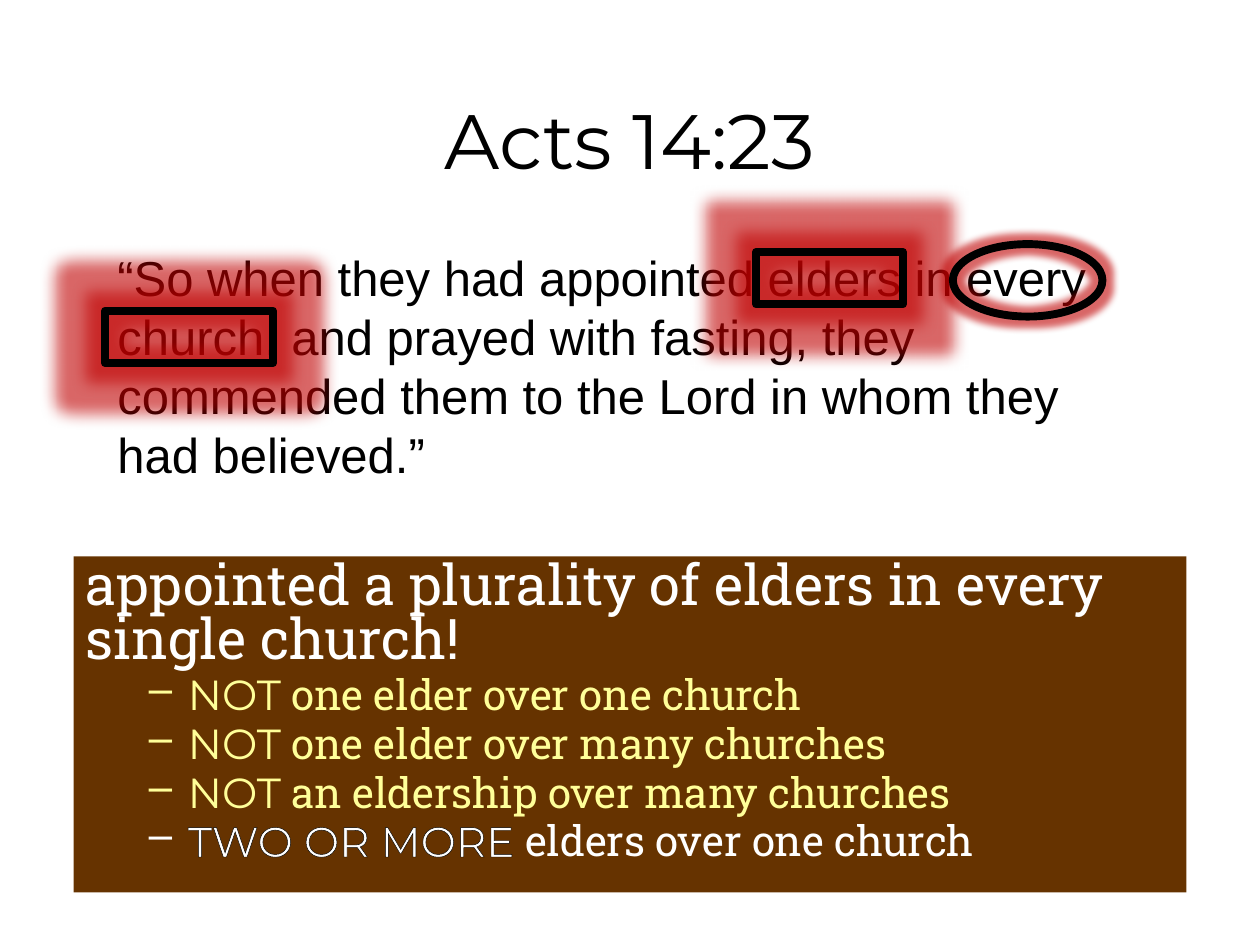
import pptx
import pptx.util
import pptx.dml.color
import pptx.enum.shapes
import pptx.enum.text
import pptx.oxml
import pptx.oxml.ns
from lxml import etree

RGBColor = pptx.dml.color.RGBColor
BLACK = RGBColor(0x00, 0x00, 0x00)
WHITE = RGBColor(0xFF, 0xFF, 0xFF)
BROWN = RGBColor(0x66, 0x33, 0x00)
YELLOW = RGBColor(0xFF, 0xFF, 0x99)
RED = RGBColor(0xC0, 0x00, 0x00)

SHAPES = pptx.enum.shapes.MSO_SHAPE
ANCHOR = pptx.enum.text.MSO_ANCHOR
ALIGN = pptx.enum.text.PP_ALIGN


def add_child(parent, tag, **values):
    child = etree.SubElement(parent, pptx.oxml.ns.qn(tag))
    for name, value in values.items():
        child.set(name, str(value))
    return child


class SlideBuilder:
    columns, rows = 120, 90
    sans, slab, plain = "Montserrat", "Roboto Slab", "Arial"

    def __init__(self, deck):
        self.deck = deck
        self.page = deck.slides.add_slide(deck.slide_layouts[6])

    def place(self, left, top, width, height):
        column = self.deck.slide_width / self.columns
        row = self.deck.slide_height / self.rows
        return [round(value) for value in
                (left * column, top * row, width * column, height * row)]

    def text_box(self, area, anchor=ANCHOR.TOP):
        box = self.page.shapes.add_textbox(*self.place(*area))
        box.text_frame.word_wrap = True
        box.text_frame.vertical_anchor = anchor
        return box

    def panel(self, area, color):
        box = self.text_box(area)
        box.fill.solid()
        box.fill.fore_color.rgb = color
        return box

    def paragraph(self, box, spans, first=False, dash=False, **formats):
        frame = box.text_frame
        para = frame.paragraphs[0] if first else frame.add_paragraph()
        for name, value in formats.items():
            setattr(para, name, value)
        properties = para._p.get_or_add_pPr()
        if not first:
            add_child(add_child(properties, "a:spcBef"), "a:spcPct", val=20000)
        if dash:
            properties.set("marL", str(pptx.util.Inches(0.81)))
            properties.set("indent", str(pptx.util.Inches(-0.31)))
            add_child(properties, "a:buChar", char="–")
        for text, font, size, color in spans:
            span = para.add_run()
            span.text = text
            style = {"name": font, "size": pptx.util.Pt(size)}
            for name, value in style.items():
                setattr(span.font, name, value)
            span.font.color.rgb = color
        return para

    def outline(self, span, color, width):
        properties = span._r.get_or_add_rPr()
        line = add_child(properties, "a:ln", w=pptx.util.Pt(width))
        add_child(add_child(line, "a:solidFill"), "a:srgbClr", val=color)
        properties.insert(0, line)

    def highlight(self, kind, area, glow):
        mark = self.page.shapes.add_shape(kind, *self.place(*area))
        mark.shadow.inherit = False
        mark.fill.background()
        mark.line.color.rgb = BLACK
        mark.line.width = pptx.util.Pt(4.5)
        effects = mark._element.spPr.find(pptx.oxml.ns.qn("a:effectLst"))
        halo = add_child(effects, "a:glow", rad=pptx.util.Pt(glow))
        add_child(add_child(halo, "a:srgbClr", val=RED), "a:alpha", val=60000)


def main():
    deck = pptx.Presentation()
    deck.slide_width = pptx.util.Inches(10)
    deck.slide_height = pptx.util.Inches(7.5)
    builder = SlideBuilder(deck)
    sans, slab = builder.sans, builder.slab

    title = builder.text_box((6, 8, 108, 10.5), ANCHOR.MIDDLE)
    builder.paragraph(title, [("Acts 14:23", sans, 44, BLACK)],
                      first=True, alignment=ALIGN.CENTER)

    panel = builder.panel((7, 53, 106, 32), BROWN)
    heading = "appointed a plurality of elders in every single church!"
    builder.paragraph(panel, [(heading, slab, 32, WHITE)],
                      first=True, line_spacing=0.8)
    points = [
        ("NOT", " one elder over one church", YELLOW),
        ("NOT", " one elder over many churches", YELLOW),
        ("NOT", " an eldership over many churches", YELLOW),
        ("TWO OR MORE ", "elders over one church", WHITE),
    ]
    for lead, rest, color in points:
        spans = [(lead, sans, 24, color), (rest, slab, 24, color)]
        point = builder.paragraph(panel, spans, dash=True,
                                  level=1, line_spacing=0.8)
    builder.outline(point.runs[0], BLACK, 0.75)

    verse = builder.text_box((10, 23, 101, 23.6))
    quote = ("“So when they had appointed elders in every church, and prayed "
             "with fasting, they commended them to the Lord in whom they had "
             "believed.”")
    builder.paragraph(verse, [(quote, builder.plain, 28, BLACK)], first=True)

    builder.highlight(SHAPES.RECTANGLE, (72, 24, 14, 5), 18)
    builder.highlight(SHAPES.OVAL, (90.75, 23.25, 14.25, 6.9), 8)
    builder.highlight(SHAPES.RECTANGLE, (10, 29.6, 16, 5), 18)

    deck.save("out.pptx")


if __name__ == "__main__":
    main()
